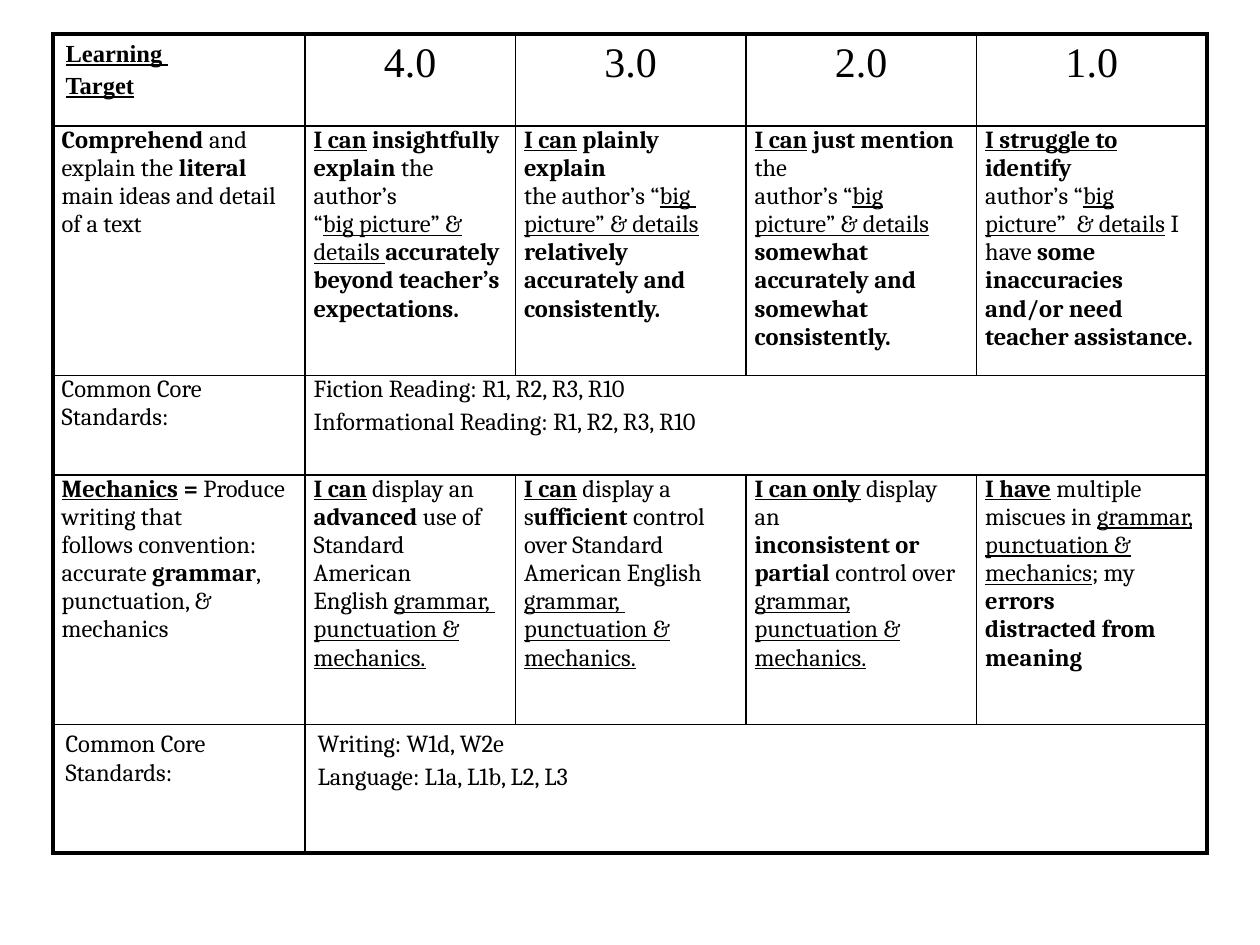
from typing import NamedTuple

from lxml.etree import SubElement
from pptx import Presentation
from pptx.dml.color import RGBColor
from pptx.enum.text import PP_ALIGN as Align
from pptx.oxml.ns import qn
from pptx.util import Inches, Pt

BLACK = RGBColor(0x00, 0x00, 0x00)
BODY_FONT, HEADING_FONT = "Cambria", "Times New Roman"
THIN, THICK = 1, 2.25
COLUMN_WIDTHS = (2, 1.67, 1.83, 1.83, 1.83)
TIGHT = {"margin_left": Inches(0.07), "margin_right": Inches(0.07),
         "margin_top": 0, "margin_bottom": 0}
ROOMY = {"margin_left": Inches(0.1), "margin_right": Inches(0.1),
         "margin_top": Inches(0.05), "margin_bottom": Inches(0.05)}


class RubricRow(NamedTuple):
    """Cell texts mark bold with *, underline with _, and paragraphs with line breaks."""
    height: float
    cells: tuple[str, ...]
    margins: dict = TIGHT
    space_before: float = 0
    font: str = BODY_FONT
    score_size: float = 14
    score_align: Align = Align.LEFT


ROWS = (
    RubricRow(0.73, ("*_Learning _*\n*_Target_*", "4.0", "3.0", "2.0", "1.0"),
              ROOMY, 2.8, HEADING_FONT, 24, Align.CENTER),
    RubricRow(1.98, (
        "*Comprehend* and\nexplain the *literal* main ideas and detail of a text",
        "*_I can_ insightfully*\n*explain* the author’s\n"
        "“_big picture” & details _*accurately beyond teacher’s expectations.*",
        "*_I can_ plainly explain*\nthe author’s “_big _\n"
        "_picture” & details_* relatively accurately and consistently.*",
        "*_I can_ just mention* the\nauthor’s “_big picture” & details_ "
        "*somewhat accurately and*\n*somewhat consistently.*",
        "*_I struggle to_ identify*\nauthor’s “_big picture”  & details_ I have "
        "*some inaccuracies*\n*and/or need teacher assistance.*")),
    RubricRow(0.79, (
        "Common Core Standards:",
        "Fiction Reading: R1, R2, R3, R10\nInformational Reading: R1, R2, R3, R10"),
        space_before=2.8),
    RubricRow(1.98, (
        "*_Mechanics_ = *Produce writing that\nfollows convention:\n"
        "accurate *grammar*,\npunctuation, & mechanics",
        "*_I can_* display an *advanced *use of Standard American\n"
        "English _grammar, _\n_punctuation & mechanics._",
        "*_I can_* display a s*ufficient *control over Standard American English "
        "_grammar, _\n_punctuation & mechanics._",
        "*_I can only_* display an\n*inconsistent or partial *control over "
        "_grammar, punctuation & mechanics._",
        "*_I have_* multiple miscues in _grammar, punctuation & mechanics_; my "
        "*errors*\n*distracted from meaning*")),
    RubricRow(1.02, (
        "Common Core Standards:",
        "Writing: W1d, W2e\nLanguage: L1a, L1b, L2, L3"), ROOMY, 2.8),
)


def set_border(cell, side: str, width: float) -> None:
    line = SubElement(cell._tc.get_or_add_tcPr(), qn(f"a:ln{side}"), w=str(Pt(width)))
    fill = SubElement(line, qn("a:solidFill"))
    SubElement(fill, qn("a:srgbClr"), val=str(BLACK))


def outline_cell(cell, row: int, column: int) -> None:
    """Rule a cell: thick on the table's rim, thin inside, nothing inside a merge."""
    last_column = column + (cell.span_width if cell.is_merge_origin else 1)
    at_right = last_column == len(COLUMN_WIDTHS)
    if not cell.is_spanned:
        set_border(cell, "L", THICK if column == 0 else THIN)
    if at_right or not cell.is_spanned:
        set_border(cell, "R", THICK if at_right else THIN)
    set_border(cell, "T", THICK if row == 0 else THIN)
    set_border(cell, "B", THICK if row == len(ROWS) - 1 else THIN)
    cell.fill.background()


def add_marked_text(para, text: str, font: str, size: float) -> None:
    for bold_index, part in enumerate(text.split("*")):
        for line_index, words in enumerate(part.split("_")):
            if not words:
                continue
            span = para.add_run()
            span.text = words
            style = {"name": font, "size": Pt(size), "bold": bold_index % 2 == 1,
                     "underline": line_index % 2 == 1}
            for name, value in style.items():
                setattr(span.font, name, value)
            span.font.color.rgb = BLACK


def fill_cell(cell, text: str, row: RubricRow, is_score: bool) -> None:
    for name, value in row.margins.items():
        setattr(cell, name, value)
    for index, line in enumerate(text.split("\n")):
        frame = cell.text_frame
        para = frame.add_paragraph() if index else frame.paragraphs[0]
        if index:
            para.space_before = Pt(row.space_before)
        para.alignment = row.score_align if is_score else Align.LEFT
        add_marked_text(para, line, row.font, row.score_size if is_score else 14)


def add_rubric(page) -> None:
    frame = page.shapes.add_table(len(ROWS), len(COLUMN_WIDTHS), Inches(0.42), Inches(0.27),
                                  Inches(sum(COLUMN_WIDTHS)),
                                  Inches(sum(row.height for row in ROWS)))
    table = frame.table
    table.first_row = table.horz_banding = False
    for column, width in zip(table.columns, COLUMN_WIDTHS):
        column.width = Inches(width)
    last = len(COLUMN_WIDTHS) - 1
    for row_index, row in enumerate(ROWS):
        table.rows[row_index].height = Inches(row.height)
        if len(row.cells) == 2:
            table.cell(row_index, 1).merge(table.cell(row_index, last))
        for column_index, text in enumerate(row.cells):
            fill_cell(table.cell(row_index, column_index), text, row, column_index > 0)
        for column_index in range(len(COLUMN_WIDTHS)):
            outline_cell(table.cell(row_index, column_index), row_index, column_index)


def main() -> None:
    deck = Presentation()
    deck.slide_width, deck.slide_height = Inches(10), Inches(7.5)
    page = deck.slides.add_slide(deck.slide_layouts[6])
    add_rubric(page)
    deck.save("out.pptx")


if __name__ == "__main__":
    main()
